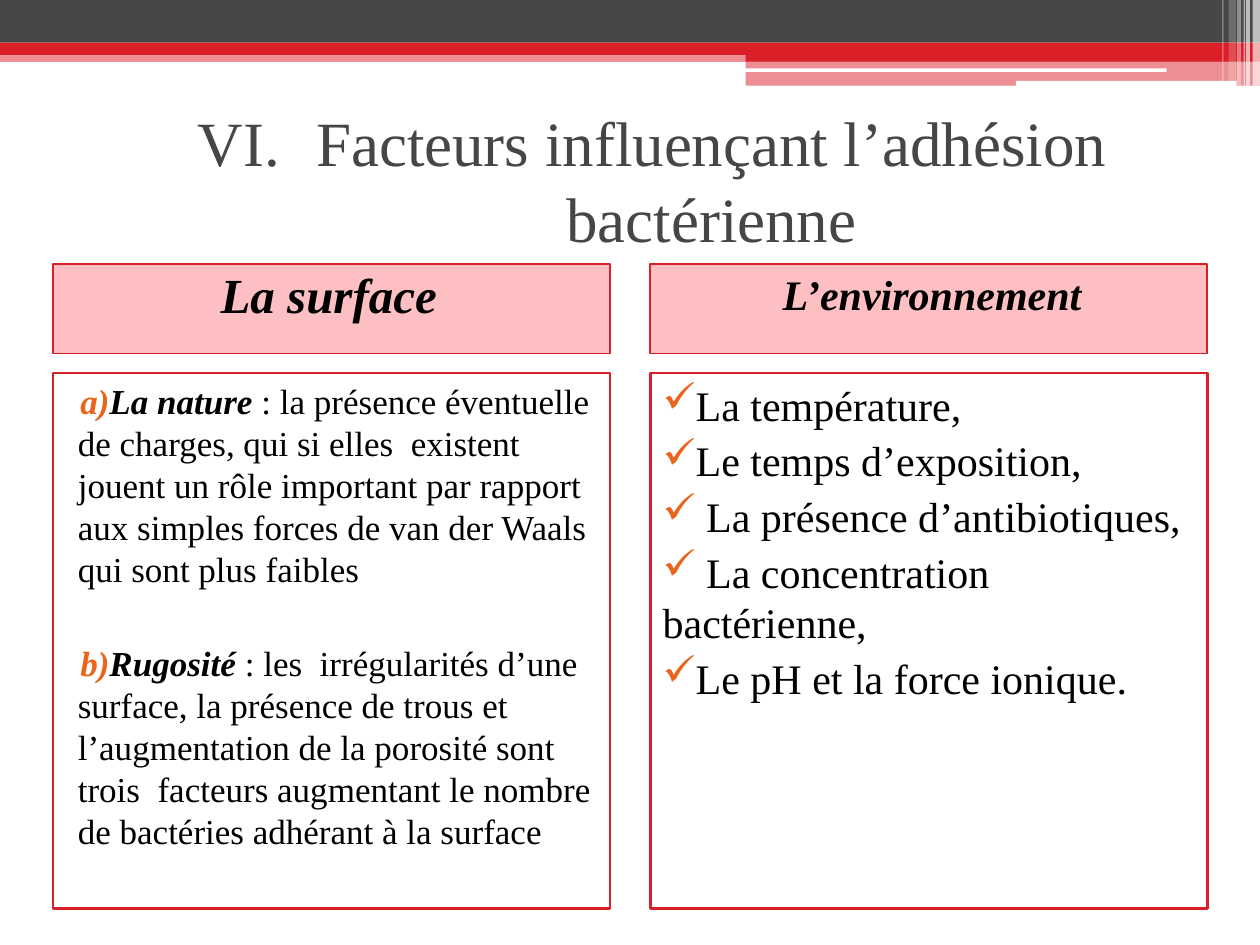
"""Build the slide on the factors that influence bacterial adhesion."""
import pptx
import pptx.dml.color
import pptx.enum.shapes
import pptx.enum.text
import pptx.oxml
import pptx.oxml.ns
import pptx.util

Cm = pptx.util.Cm
Pt = pptx.util.Pt
RGBColor = pptx.dml.color.RGBColor
SHAPES = pptx.enum.shapes.MSO_SHAPE
ANCHOR = pptx.enum.text.MSO_ANCHOR
ALIGN = pptx.enum.text.PP_ALIGN
qn = pptx.oxml.ns.qn

COLORS = {
    "red": "DA1F28",
    "gray": "464646",
    "white": "FFFFFF",
    "black": "000000",
    "header": "F9000C",
    "bullet": "EB641B",
}
FONT = "Times New Roman"


def add_box(left, top, width, height, color, opacity=100, line=None, kind=SHAPES.RECTANGLE):
    shape = slide.shapes.add_shape(kind, Cm(left), Cm(top), Cm(width), Cm(height))
    shape.shadow.inherit = False
    shape.fill.solid()
    shape.fill.fore_color.rgb = RGBColor.from_string(COLORS[color])
    if opacity < 100:
        rgb = shape._element.spPr.find(qn("a:solidFill")).find(qn("a:srgbClr"))
        rgb.append(rgb.makeelement(qn("a:alpha"), {"val": str(opacity * 1000)}))
    if line:
        shape.line.color.rgb = RGBColor.from_string(COLORS["red"])
        shape.line.width = Pt(line)
    else:
        shape.line.fill.background()
    return shape


def add_text(paragraph, text, size, color="black", emphasis=False, align=None,
             margin=None, indent=0, before=None, bullet=None, bullet_color=None):
    run = paragraph.add_run()
    run.text = text
    run.font.name = FONT
    run.font.size = Pt(size)
    run.font.bold = run.font.italic = emphasis
    run.font.color.rgb = RGBColor.from_string(COLORS[color])
    if align is not None:
        paragraph.alignment = align
    if before is not None:
        paragraph.space_before = Pt(before)
    properties = paragraph._p.get_or_add_pPr()
    if margin is not None:
        properties.set("marL", str(Cm(margin)))
        properties.set("indent", str(Cm(indent)))
    if bullet_color:
        marker_color = properties.makeelement(qn("a:buClr"), {})
        marker_color.append(marker_color.makeelement(qn("a:srgbClr"), {"val": COLORS[bullet_color]}))
        properties.append(marker_color)
    if bullet:
        tag, attributes = bullet
        properties.append(properties.makeelement(qn(tag), attributes))


presentation = pptx.Presentation()
presentation.slide_width = Cm(25.4)
presentation.slide_height = Cm(19.05)
slide = presentation.slides.add_slide(presentation.slide_layouts[5])

for left, top, width, height, color, opacity in [
    (0, 1.02, 25.4, 0.23, "red", 50),
    (0, 0, 25.4, 0.86, "gray", 100),
    (0, 0.86, 25.4, 0.25, "red", 100),
    (15.03, 0.99, 10.37, 0.25, "red", 100),
    (15.03, 1.23, 10.37, 0.5, "red", 50),
]:
    add_box(left, top, width, height, color, opacity)

for left, top, width, height in [(15.02, 1.38, 8.5, 0.07), (20.48, 1.63, 4.45, 0.1)]:
    add_box(left, top, width, height, "white", kind=SHAPES.ROUNDED_RECTANGLE)

for left, width, height, opacity in [
    (25.25, 0.15, 1.73, 65),
    (25.12, 0.08, 1.73, 65),
    (25.07, 0.03, 1.73, 60),
    (24.94, 0.08, 1.73, 40),
    (24.77, 0.15, 1.63, 20),
    (24.64, 0.03, 1.63, 30),
]:
    add_box(left, 0, width, height, "white", opacity)

title = slide.shapes.title
title.left, title.top, title.width, title.height = Cm(1.5), Cm(2.13), Cm(23.3), Cm(2.97)
title.text_frame.vertical_anchor = ANCHOR.MIDDLE
title.text_frame.word_wrap = True
add_text(title.text_frame.paragraphs[0], "Facteurs influençant l’adhésion bactérienne", 36, "gray",
         align=ALIGN.CENTER, margin=2.39, indent=-2.39,
         bullet=("a:buAutoNum", {"type": "romanUcPeriod", "startAt": "6"}))

bodies = []
for left, heading, size, inset in [(1.07, "La surface ", 28, 0), (13.11, "L’environnement", 24, 0.08)]:
    header = add_box(left, 5.33, 11.23, 1.8, "header", 25, line=1)
    header.text_frame.word_wrap = True
    header.text_frame.vertical_anchor = ANCHOR.TOP
    header.text_frame.margin_top = Cm(inset)
    add_text(header.text_frame.paragraphs[0], heading, size, emphasis=True,
             align=ALIGN.CENTER, margin=0.13)
    body = add_box(left, 7.52, 11.23, 10.8, "white", line=1.5)
    body.text_frame.word_wrap = True
    body.text_frame.vertical_anchor = ANCHOR.TOP
    bodies.append(body.text_frame)

surface, environment = bodies
for number, (term, description, before) in enumerate([
    ("La nature ", ": la présence éventuelle de charges, qui si elles  existent jouent un rôle important "
     "par rapport aux simples forces de van der Waals qui sont plus faibles", 3),
    ("Rugosité", " : les  irrégularités d’une surface, la présence de trous et l’augmentation de la porosité "
     "sont trois  facteurs augmentant le nombre de bactéries adhérant à la surface", 30),
], start=1):
    paragraph = surface.paragraphs[0] if number == 1 else surface.add_paragraph()
    add_text(paragraph, term, 20, emphasis=True, align=ALIGN.LEFT, margin=0.25, indent=0.05,
             before=before, bullet_color="bullet",
             bullet=("a:buAutoNum", {"type": "alphaLcParenR", "startAt": str(number)}))
    add_text(paragraph, description, 20)

for index, factor in enumerate([
    "La température,",
    "Le temps d’exposition,",
    " La présence d’antibiotiques,",
    " La concentration bactérienne,",
    "Le pH et la force ionique.",
]):
    paragraph = environment.add_paragraph() if index else environment.paragraphs[0]
    add_text(paragraph, factor, 24, align=ALIGN.LEFT, margin=0, before=3,
             bullet_color="bullet", bullet=("a:buChar", {"char": "✓"}))

presentation.save("out.pptx")
